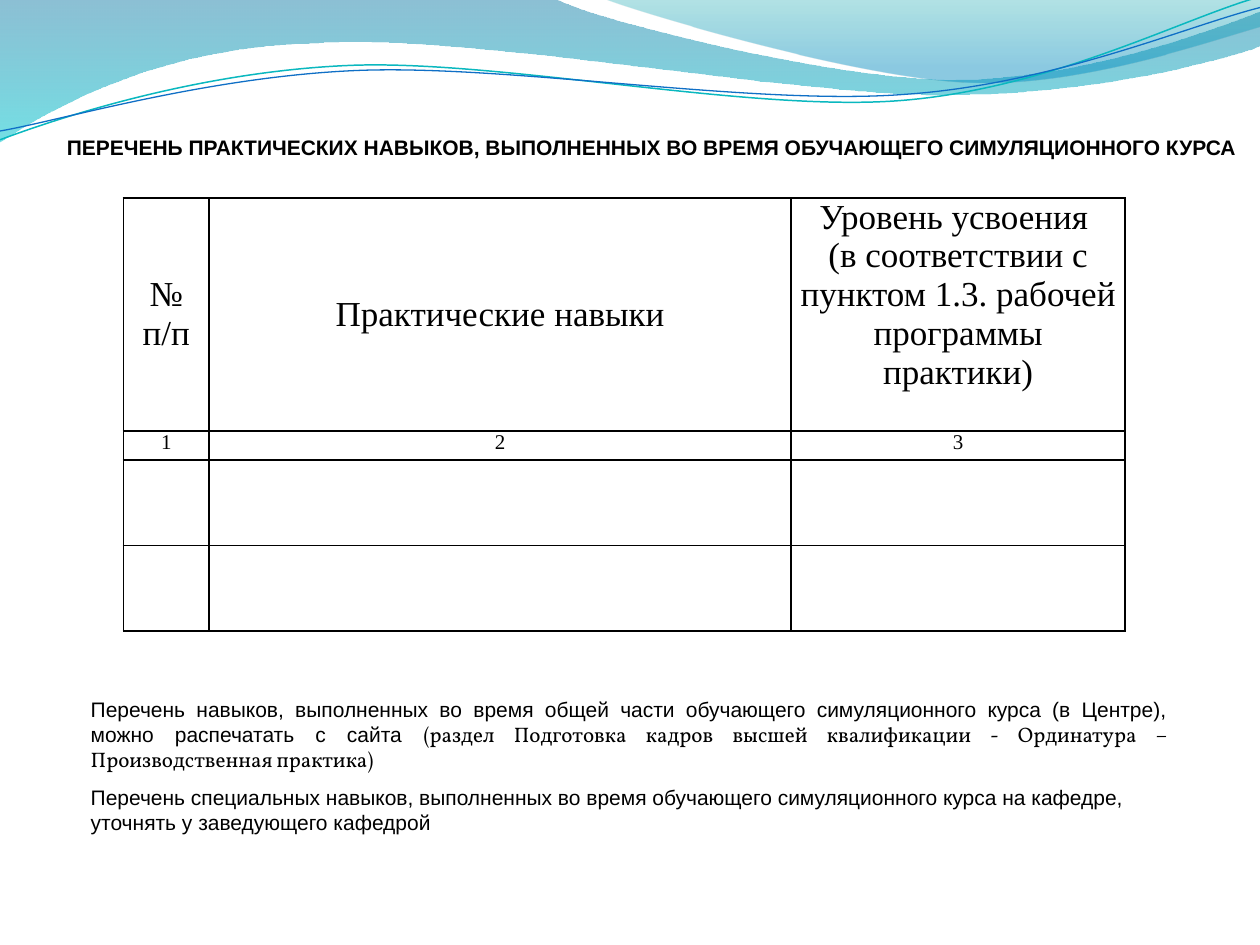
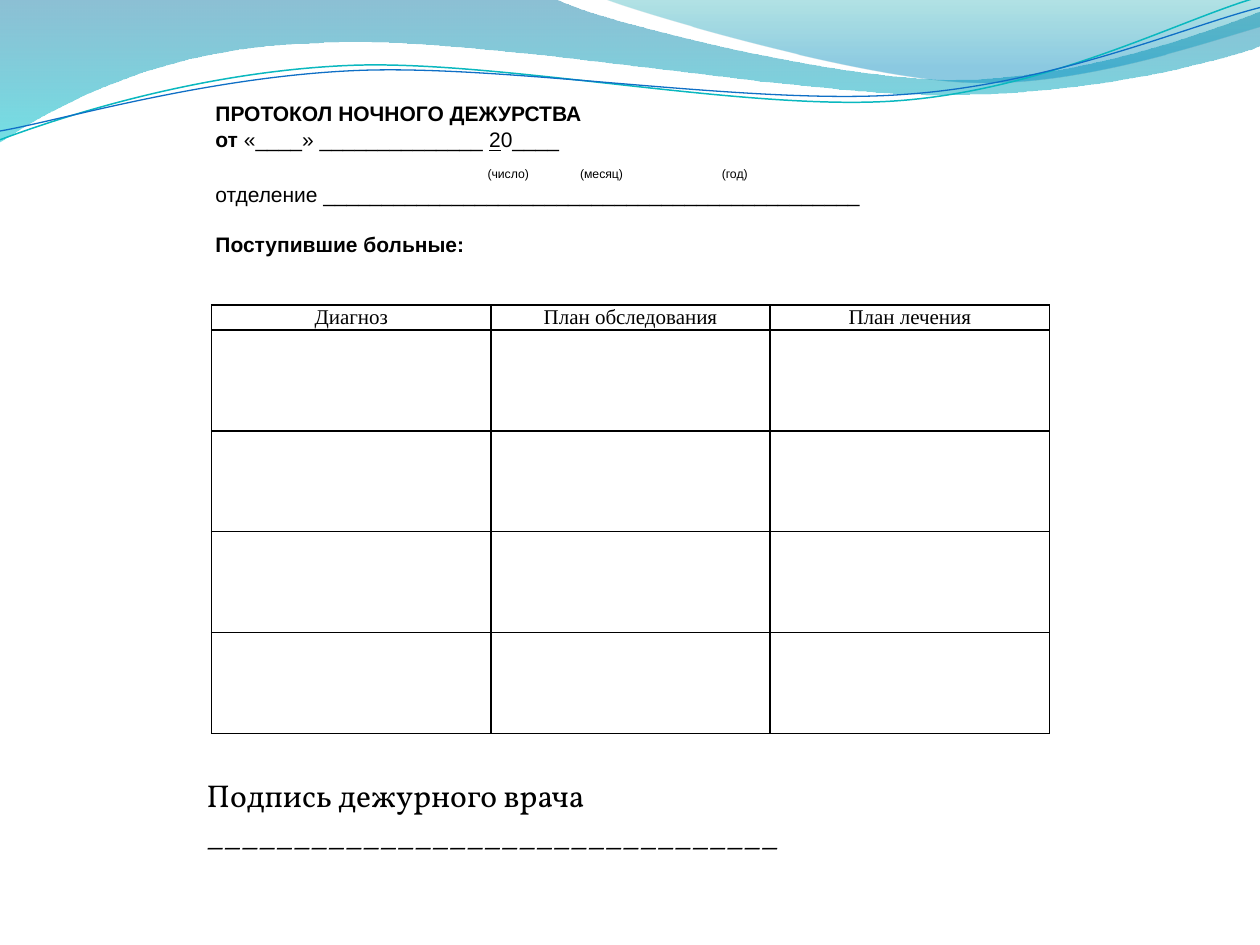
import pptx
import pptx.util
import pptx.dml.color
import pptx.enum.text
import pptx.oxml
import pptx.oxml.ns

Inches, Pt = pptx.util.Inches, pptx.util.Pt
ALIGN = pptx.enum.text.PP_ALIGN
ANCHOR = pptx.enum.text.MSO_ANCHOR
qn = pptx.oxml.ns.qn

# Shared look
HUES = {"ink": "000000", "blue": "0074A1", "cyan": "00C6CF", "teal": "00A1A9",
        "sky": "008BBF", "aqua": "0AB8BF", "navy": "0F6FC6"}
SANS, SERIF, BOOK = "Arial", "Times New Roman", "Vollkorn"

# Waves: start point, then segments of two (line) or six (curve) numbers
BANDS = [
    {"start": (0, 0),
     "segs": [(4.4, -0.01), (4.76, 0.17, 6.64, 0.63, 7.58, 0.63),
              (8.53, 0.63, 9.58, 0.26, 10, 0.09), (10.01, 0.36),
              (9.83, 0.44, 8.7, 0.76, 7.46, 0.75),
              (6.22, 0.75, 3.82, 0.28, 2.57, 0.34),
              (1.29, 0.36, 0.46, 0.83, -0.01, 1.13)],
     "stops": [(0, "blue", 45), (1, "cyan", 55)]},
    {"start": (4.79, -0.01),
     "segs": [(5.09, 0.11, 6.82, 0.62, 7.69, 0.65),
              (8.56, 0.69, 9.61, 0.32, 10, 0.21), (10, 0)],
     "stops": [(0, "teal", 30), (0.8, "sky", 45)]},
    {"start": (0, 1.11),
     "segs": [(0.48, 0.93, 1.58, 0.57, 2.77, 0.52),
              (3.95, 0.47, 5.93, 0.89, 7.13, 0.8),
              (8.33, 0.71, 9.38, 0.15, 9.98, -0.02)],
     "line": ("aqua", 0.85)},
    {"start": (0, 1.04),
     "segs": [(0.47, 0.96, 1.64, 0.61, 2.83, 0.56),
              (4.03, 0.51, 5.97, 0.84, 7.17, 0.75),
              (8.36, 0.67, 9.41, 0.21, 10, 0.06)],
     "line": ("navy", 0.75)},
]

# Content: a paragraph is a list of (text, format) runs plus its own settings
SKILLS = {
    "title": {
        "box": (0.53, 1.07, 9.4, 0.2),
        "paras": [{"runs": [("ПЕРЕЧЕНЬ ПРАКТИЧЕСКИХ НАВЫКОВ, ВЫПОЛНЕННЫХ ВО ВРЕМЯ "
                             "ОБУЧАЮЩЕГО СИМУЛЯЦИОННОГО КУРСА", {})], "bold": True}]},
    "body": {
        "box": (0.72, 5.53, 8.55, 0.6),
        "paras": [{"runs": [
            ("Перечень навыков, выполненных во время общей части обучающего "
             "симуляционного курса (в Центре), можно распечатать с сайта ", {}),
            ("(раздел Подготовка кадров высшей квалификации - Ординатура – "
             "Производственная практика)", {"name": BOOK})],
            "align": ALIGN.JUSTIFY, "line": 14.3}]},
    "table": {
        "at": (0.98, 1.57), "cols": [0.68, 4.62, 2.65],
        "rows": [1.85, 0.23, 0.68, 0.68], "sizes": [20, 12],
        "text": [["№\nп/п", "Практические навыки",
                  "Уровень усвоения \n(в соответствии с пунктом 1.3. рабочей "
                  "программы практики)"],
                 ["1", "2", "3"]],
        "top": [(0, 2)]},
}
NOTE = {
    "box": (0.72, 6.23, 8.55, 0.4),
    "paras": [{"runs": [("Перечень специальных навыков, выполненных во время обучающего "
                         "симуляционного курса на кафедре, уточнять у заведующего "
                         "кафедрой", {})], "line": 14.3}]}
DUTY = {
    "title": {
        "box": (1.71, 0.8, 7, 1.25),
        "paras": [
            {"runs": [("ПРОТОКОЛ НОЧНОГО ДЕЖУРСТВА", {})], "bold": True},
            {"runs": [("от ", {"bold": True}), ("«____» ______________ ", {}),
                      ("2", {"underline": True}), ("0____", {})], "before": 0.5},
            {"runs": [("(число)", {}), (" ", {"gap": 27.3}), ("(месяц)", {}),
                      (" ", {"gap": 54.5}), ("(год)", {})],
             "size": 7, "before": 8, "indent": 2.16},
            {"runs": [("отделение " + "_" * 46, {})], "before": 0.5},
            {"runs": [("Поступившие больные:", {})], "bold": True, "before": 14}]},
    "body": {
        "box": (1.64, 6.16, 7.28, 0.75),
        "paras": [{"runs": [("Подпись дежурного врача " + "_" * 33, {})],
                   "size": 18, "name": BOOK}]},
    "table": {
        "at": (1.68, 2.42), "cols": [6.65 / 3] * 3, "rows": [0.2] + [0.8] * 4,
        "sizes": [12],
        "text": [["Диагноз", "План обследования", "План лечения"]],
        "top": []},
}


def rgb(key):
    return pptx.dml.color.RGBColor.from_string(HUES[key])


def style(font, size, name, bold=False):
    font.size, font.name, font.bold = Pt(size), name, bold
    font.color.rgb = rgb("ink")


# Waves
def bend(wave, segs):
    """Turn the straight segments into Bezier curves where six numbers are given."""
    lines = wave.element.findall(".//" + qn("a:lnTo"))
    for line, seg in zip(lines, segs):
        if len(seg) == 2:
            continue
        curve = line.makeelement(qn("a:cubicBezTo"), {})
        for x, y in zip(seg[::2], seg[1::2]):
            spot = {"x": str(Inches(x) - wave.left), "y": str(Inches(y) - wave.top)}
            curve.append(line.makeelement(qn("a:pt"), spot))
        line.getparent().replace(line, curve)


def add_wave(slide, band):
    ends = [(Inches(seg[-2]), Inches(seg[-1])) for seg in band["segs"]]
    pen = slide.shapes.build_freeform(*map(Inches, band["start"]), scale=1.0)
    pen.add_line_segments(ends, close="stops" in band)
    wave = pen.convert_to_shape()
    bend(wave, band["segs"])
    wave.shadow.inherit = False
    if "line" in band:
        hue, width = band["line"]
        wave.fill.background()
        wave.line.color.rgb, wave.line.width = rgb(hue), Pt(width)
        return wave
    wave.line.fill.background()
    wave.fill.gradient()
    wave.fill.gradient_angle = 270
    nodes = wave.element.findall(".//" + qn("a:gs"))
    for stop, node, (pos, hue, alpha) in zip(wave.fill.gradient_stops, nodes, band["stops"]):
        stop.color.rgb, stop.position = rgb(hue), pos
        node[0].append(node[0].makeelement(qn("a:alpha"), {"val": str(alpha * 1000)}))
    return wave


# Text
def write(shape, block):
    shape.left, shape.top, shape.width, shape.height = map(Inches, block["box"])
    frame = shape.text_frame
    frame.word_wrap = True
    frame.auto_size = pptx.enum.text.MSO_AUTO_SIZE.NONE
    frame.vertical_anchor = ANCHOR.TOP
    frame.margin_left = frame.margin_right = frame.margin_top = frame.margin_bottom = 0
    for i, item in enumerate(block["paras"]):
        para = frame.paragraphs[0] if i == 0 else frame.add_paragraph()
        for text, look in item["runs"]:
            run = para.add_run()
            run.text = text
            for key, value in look.items():
                if key == "gap":
                    run._r.get_or_add_rPr().set("spc", str(round(value * 100)))
                else:
                    setattr(run.font, key, value)
        style(para.font, item.get("size", 12), item.get("name", SANS), item.get("bold", False))
        para.alignment = item.get("align", ALIGN.LEFT)
        para.space_before = Pt(item.get("before", 0))
        para.line_spacing = Pt(item["line"]) if "line" in item else 1.0
        # No bullet, plain indent
        props = para._p.get_or_add_pPr()
        props.set("marL", str(Inches(item.get("indent", 0))))
        props.set("indent", "0")
        props.find(qn("a:defRPr")).addprevious(props.makeelement(qn("a:buNone"), {}))


# Tables
def frame_cell(cell):
    cell.fill.background()
    props = cell._tc.get_or_add_tcPr()
    for i, side in enumerate("LRTB"):
        props.insert(i, pptx.oxml.parse_xml(
            f'<a:ln{side} {pptx.oxml.ns.nsdecls("a")} w="12700"><a:solidFill>'
            f'<a:srgbClr val="{HUES["ink"]}"/></a:solidFill></a:ln{side}>'))


def add_grid(slide, data):
    cols, rows = data["cols"], data["rows"]
    box = (*data["at"], sum(cols), sum(rows))
    grid = slide.shapes.add_table(len(rows), len(cols), *map(Inches, box)).table
    grid.first_row = grid.horz_banding = False
    for col, width in zip(grid.columns, cols):
        col.width = Inches(width)
    for r, height in enumerate(rows):
        grid.rows[r].height = Inches(height)
        for c in range(len(cols)):
            cell = grid.cell(r, c)
            cell.margin_left = cell.margin_right = Inches(0.07)
            cell.margin_top = cell.margin_bottom = 0
            frame_cell(cell)
            if r >= len(data["text"]):
                continue
            cell.text = data["text"][r][c]
            mid = r == 0 and (r, c) not in data["top"]
            cell.vertical_anchor = ANCHOR.MIDDLE if mid else ANCHOR.TOP
            for para in cell.text_frame.paragraphs:
                para.alignment = ALIGN.CENTER
                style(para.font, data["sizes"][r], SERIF)


def add_page(deck, layout, data):
    slide = deck.slides.add_slide(layout)
    write(slide.shapes.title, data["title"])
    write(slide.placeholders[1], data["body"])
    add_grid(slide, data["table"])
    return slide


def main():
    deck = pptx.Presentation()
    deck.slide_width, deck.slide_height = Inches(10), Inches(7.5)
    layout = deck.slide_layouts[1]
    skills = add_page(deck, layout, SKILLS)
    write(skills.shapes.add_textbox(0, 0, 0, 0), NOTE)
    add_page(deck, layout, DUTY)

    # The waves move to the layout, behind everything
    for i, band in enumerate(BANDS):
        layout.shapes.element.insert(2 + i, add_wave(skills, band).element)
    deck.save("out.pptx")


if __name__ == "__main__":
    main()
